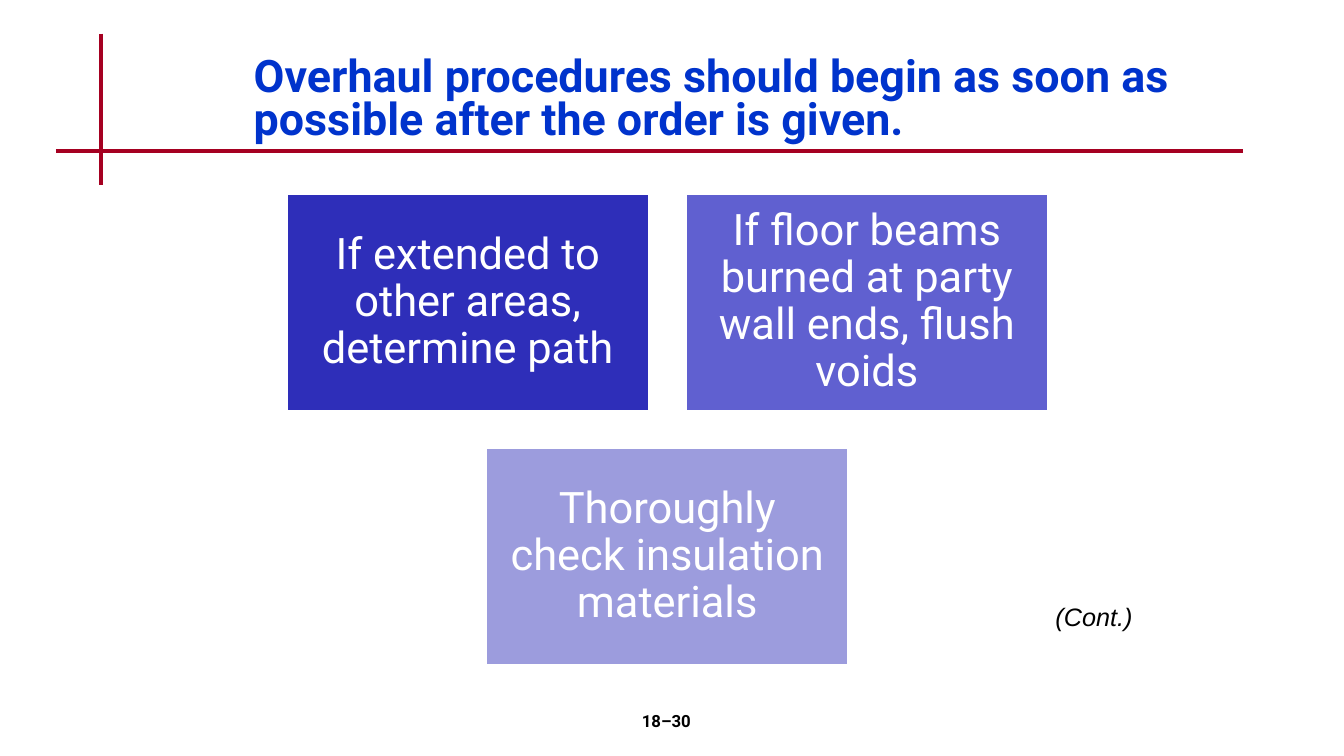
"""Build the overhaul procedures slide."""
from pptx import Presentation
from pptx.dml.color import RGBColor
from pptx.enum.shapes import MSO_CONNECTOR as Link, MSO_SHAPE as Shape
from pptx.enum.text import MSO_ANCHOR as Anchor, MSO_AUTO_SIZE as Fit, PP_ALIGN as Align
from pptx.oxml.ns import qn
from pptx.util import Pt
from lxml.etree import SubElement

BLUE = RGBColor(0x00, 0x33, 0xCC)
RED = RGBColor(0xA5, 0x00, 0x21)
BLACK = RGBColor(0, 0, 0)
WHITE = RGBColor(255, 255, 255)
DARK = RGBColor(0x2E, 0x2E, 0xB9)
MID = RGBColor(0x60, 0x60, 0xD0)
PALE = RGBColor(0x9C, 0x9C, 0xDD)

TITLE = "Overhaul procedures should begin as soon as possible after the order is given."
ROWS = [
    [("If extended to other areas, determine path", DARK),
     ("If floor beams burned at party wall ends, flush voids", MID)],
    [("Thoroughly check insulation materials", PALE)],
]
RULES = [(72, 24, 72, 132), (40, 108, 888, 108)]
NOTES = [
    ("18–30", (376, 504, 200, 36), Align.CENTER, "Roboto", 12, True, False),
    ("(Cont.)", (696, 426, 120, 29), Align.RIGHT, "Arial", 18, False, True),
]
WIDE, HIGH, GAP = 259.2, 155.5, 25.9
AXIS, TOP = 476.6, 138.2


def write(frame, text, align, face, size, color, bold=False, slant=False):
    """Fill a frame with one styled paragraph and return it."""
    frame.word_wrap = True
    frame.text = text
    para = frame.paragraphs[0]
    para.alignment = align
    font = para.font
    font.name, font.size = face, Pt(size)
    font.bold, font.italic = bold, slant
    font.color.rgb = color
    return para


def main():
    """Lay out the slide and save it."""
    deck = Presentation()
    deck.slide_width, deck.slide_height = Pt(960), Pt(540)
    slide = deck.slides.add_slide(deck.slide_layouts[5])
    shapes = slide.shapes

    for ends in RULES:
        rule = shapes.add_connector(Link.STRAIGHT, *map(Pt, ends))
        rule.line.color.rgb, rule.line.width = RED, Pt(3)
        SubElement(rule.element.spPr, qn("a:effectLst"))

    title = shapes.title
    title.left, title.top, title.width, title.height = map(Pt, (174, 36, 671, 72))
    frame = title.text_frame
    frame.auto_size, frame.vertical_anchor = Fit.NONE, Anchor.MIDDLE
    para = write(frame, TITLE, Align.LEFT, "Roboto", 32, BLUE, bold=True)
    para.line_spacing = 0.8

    for row, cards in enumerate(ROWS):
        span = len(cards) * (WIDE + GAP) - GAP
        for col, (text, fill) in enumerate(cards):
            left = AXIS - span / 2 + col * (WIDE + GAP)
            top = TOP + row * (HIGH + GAP)
            card = shapes.add_shape(Shape.RECTANGLE, *map(Pt, (left, top, WIDE, HIGH)))
            card.shadow.inherit = False
            card.fill.solid()
            card.fill.fore_color.rgb = fill
            card.line.color.rgb, card.line.width = WHITE, Pt(2)
            frame = card.text_frame
            frame.vertical_anchor = Anchor.MIDDLE
            frame.margin_left = frame.margin_right = Pt(9.4)
            frame.margin_top = frame.margin_bottom = Pt(9.4)
            para = write(frame, text, Align.CENTER, "Roboto", 31, WHITE)
            para.line_spacing = 0.9

    for text, box, align, face, size, bold, slant in NOTES:
        note = shapes.add_textbox(*map(Pt, box))
        write(note.text_frame, text, align, face, size, BLACK, bold, slant)

    deck.save("out.pptx")


if __name__ == "__main__":
    main()
